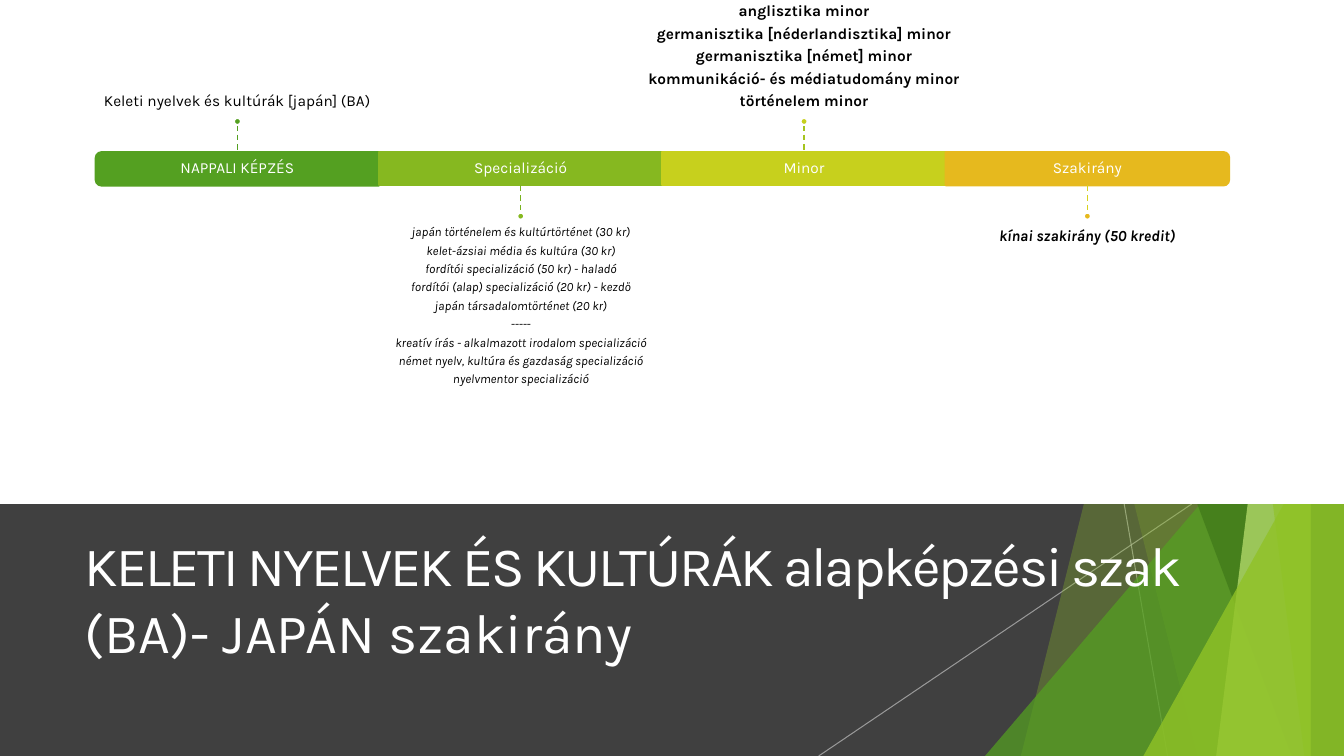
"""Build the slide on the Japanese programme: a four-part bar above a dark title band."""
import pptx
import pptx.util
import pptx.dml.color
import pptx.enum.dml
import pptx.enum.shapes
import pptx.enum.text
import pptx.oxml
import pptx.oxml.ns

Inches, Pt = pptx.util.Inches, pptx.util.Pt
Form = pptx.enum.shapes.MSO_SHAPE
Anchor = pptx.enum.text.MSO_ANCHOR
Align = pptx.enum.text.PP_ALIGN
RGB = pptx.dml.color.RGBColor.from_string
qn = pptx.oxml.ns.qn

FONT = "Karla"
WIDE, HIGH, SPLIT = 13.33, 7.5, 5
HUES = {
    "white": "FFFFFF", "black": "000000", "dark": "404040", "grey": "BFBFBF",
    "lime": "90C226", "green": "54A021", "forest": "3F7819", "pale": "C0E474",
    "leaf": "86B820", "acid": "C7D01D", "gold": "E6B91E",
    "stem2": "79B220", "stem3": "A5C41F", "stem4": "D7D31D",
}


def paint(fill, hue, alpha=100):
    fill.solid()
    fill.fore_color.rgb = RGB(HUES[hue])
    if alpha < 100:
        color = fill._xPr.find(qn("a:solidFill"))[0]
        color.append(pptx.oxml.parse_xml(
            '<a:alpha xmlns:a="http://schemas.openxmlformats.org/drawingml/2006/main"'
            f' val="{alpha * 1000}"/>'))


def draw_line(start, end, hue, width, alpha=100):
    line = shapes.add_connector(pptx.enum.shapes.MSO_CONNECTOR.STRAIGHT,
                                *(Inches(n) for n in start + end))
    paint(line.line.fill, hue, alpha)
    line.line.width = Pt(width)
    props = line._element.spPr
    props.append(props.makeelement(qn("a:effectLst"), {}))
    return line


deck = pptx.Presentation()
deck.slide_width, deck.slide_height = Inches(WIDE), Inches(HIGH)
slide = deck.slides.add_slide(deck.slide_layouts[5])
shapes = slide.shapes

band = shapes.add_shape(Form.RECTANGLE, 0, Inches(SPLIT), Inches(WIDE), Inches(HIGH - SPLIT))
band.shadow.inherit = False
paint(band.fill, "dark")
band.line.fill.background()

for top, foot in ((11.15, 11.58), (11.82, 8.12)):
    draw_line((top, SPLIT), (foot, HIGH), "grey", 0.75, 70)

shards = [
    ("blade", 12.28, 10.04, "lime", 30),
    ("blade", 10.5, 11.83, "lime", 20),
    ("peak", 3.33, 9.77, "green", 72),
    ("blade", 10.21, 12.91, "forest", 70),
    ("blade", 13.03, 11.92, "pale", 70),
    ("blade", 11.96, 13.18, "lime", 65),
    ("peak", 3.93, 11.34, "lime", 80),
]
for kind, top, foot, hue, alpha in shards:
    if kind == "blade":
        path = shapes.build_freeform(top, 0, scale=Inches(1))
        path.add_line_segments([(WIDE, 0), (WIDE, HIGH), (foot, HIGH)], close=True)
        shard = path.convert_to_shape()
    else:
        shard = shapes.add_shape(Form.ISOSCELES_TRIANGLE, Inches(foot), Inches(top),
                                 Inches(WIDE - foot), Inches(HIGH - top))
        shard.adjustments[0] = 1
    shard.shadow.inherit = False
    paint(shard.fill, hue, alpha)
    shard.line.fill.background()

title = shapes.title
shapes._spTree.append(title._element)
title.left, title.top = Inches(0.74), Inches(5.21)
title.width, title.height = Inches(12.4), Inches(1.44)
frame = title.text_frame
frame.auto_size = pptx.enum.text.MSO_AUTO_SIZE.NONE
frame.word_wrap = True
frame.vertical_anchor = Anchor.MIDDLE
para = frame.paragraphs[0]
para.alignment = Align.LEFT
para.font.name, para.font.size = FONT, Pt(39.6)
para.font.color.rgb = RGB(HUES["white"])
for words, gap in (("KELETI NYELVEK ÉS KULTÚRÁK alapképzési szak ", -160),
                   ("(BA)- JAPÁN szakirány", 0)):
    run = para.add_run()
    run.text = words
    run.font._element.set("spc", str(gap))

panel = shapes.add_shape(Form.RECTANGLE, 0, 0, Inches(WIDE), Inches(SPLIT))
panel.shadow.inherit = False
paint(panel.fill, "white")
panel.line.fill.background()

LEFT, TOP, STEP, THICK = 0.95, 1.51, 2.81, 0.33
NOTE, DOT = 4.69, 0.07
parts = [
    ("NAPPALI KÉPZÉS", "green", "green", 270, 11, False, False,
     ["Keleti nyelvek és kultúrák [japán] (BA)"]),
    ("Specializáció", "leaf", "stem2", 0, 9, False, True,
     ["japán történelem és kultúrtörténet (30 kr)",
      "kelet-ázsiai média és kultúra (30 kr)",
      "fordítói specializáció (50 kr) - haladó",
      "fordítói (alap) specializáció (20 kr) - kezdő",
      "japán társadalomtörténet (20 kr)",
      "-----",
      "kreatív írás - alkalmazott irodalom specializáció",
      "német nyelv, kultúra és gazdaság specializáció",
      "nyelvmentor specializáció"]),
    ("Minor", "acid", "stem3", 0, 11, True, False,
     ["anglisztika minor",
      "germanisztika [néderlandisztika] minor",
      "germanisztika [német] minor",
      "kommunikáció- és médiatudomány minor",
      "történelem minor"]),
    ("Szakirány", "gold", "stem4", 90, 11, True, True,
     ["kínai szakirány (50 kredit)"]),
]
for i, (name, hue, stem, turn, size, bold, slant, notes) in enumerate(parts):
    left = LEFT + i * STEP
    mid = left + STEP / 2
    above = i % 2 == 0

    wide, high = (THICK, STEP) if turn else (STEP, THICK)
    bar = shapes.add_shape(Form.ROUND_2_SAME_RECTANGLE if turn else Form.RECTANGLE,
                           Inches(mid - wide / 2), Inches(TOP + (THICK - high) / 2),
                           Inches(wide), Inches(high))
    bar.rotation = turn
    bar.shadow.inherit = False
    paint(bar.fill, hue)
    paint(bar.line.fill, hue)
    bar.line.width = Pt(1.5)

    note_top = 0.01 if above else 2.17
    pads = (0, 0.09) if above else (0.07 if size == 9 else 0.09, 0)
    anchor = Anchor.BOTTOM if above else Anchor.TOP
    texts = [
        (left, TOP, STEP, THICK, 0.09, (0.09, 0.09), Anchor.MIDDLE,
         [name], 11, "white", False, False),
        (mid - NOTE / 2, note_top, NOTE, 1.17, 0, pads, anchor,
         notes, size, "black", bold, slant),
    ]
    for x, y, w, h, side, ends, hold, lines, points, ink, thick, lean in texts:
        box = shapes.add_textbox(Inches(x), Inches(y), Inches(w), Inches(h))
        frame = box.text_frame
        frame.word_wrap = True
        frame.vertical_anchor = hold
        frame.margin_left = frame.margin_right = Inches(side)
        frame.margin_top, frame.margin_bottom = (Inches(n) for n in ends)
        frame.text = "\n".join(lines)
        for para in frame.paragraphs:
            para.alignment = Align.CENTER
            para.line_spacing = 0.9
            para.space_after = Pt(round(0.38 * points, 1))
            para.font.name, para.font.size = FONT, Pt(points)
            para.font.bold, para.font.italic = thick, lean
            para.font.color.rgb = RGB(HUES[ink])

    start, end = (1.24, TOP) if above else (TOP + THICK, 2.11)
    line = draw_line((mid, start), (mid, end), stem, 1)
    line.line.dash_style = pptx.enum.dml.MSO_LINE.DASH

    dot = shapes.add_shape(Form.OVAL, Inches(mid - DOT / 2), Inches(1.17 if above else 2.11),
                           Inches(DOT), Inches(DOT))
    dot.shadow.inherit = False
    paint(dot.fill, hue)
    paint(dot.line.fill, "white")
    dot.line.width = Pt(1.5)

deck.save("out.pptx")
